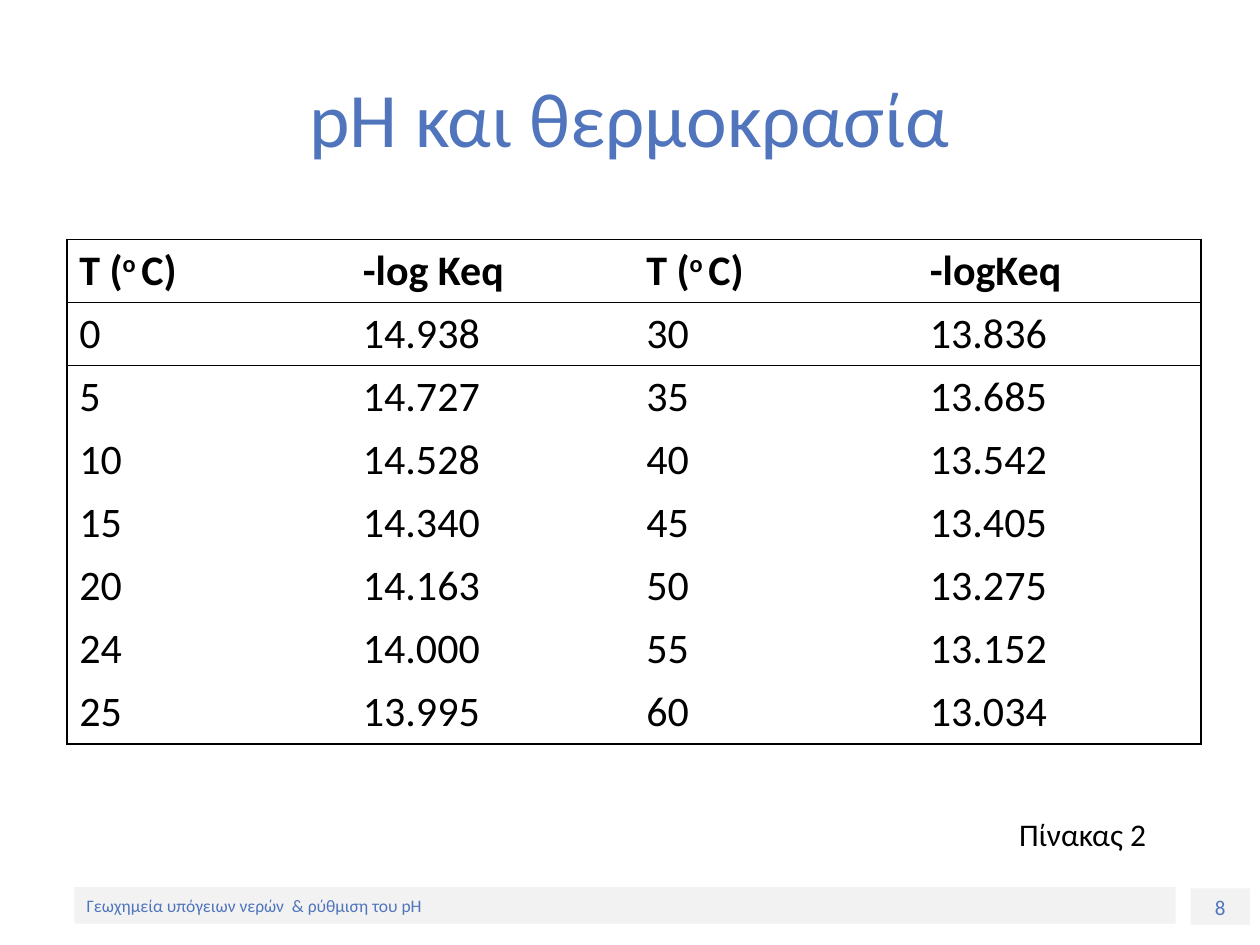
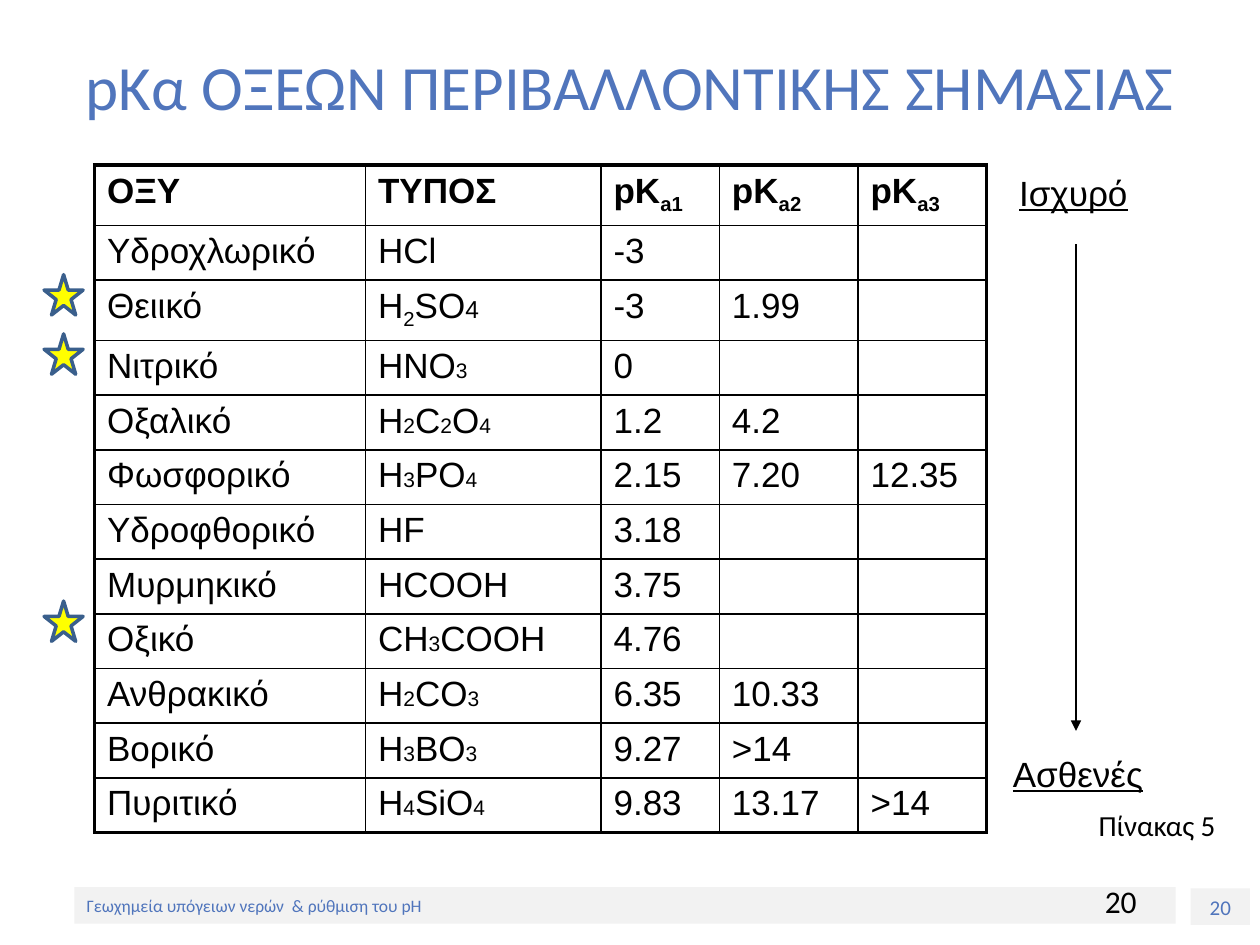
import itertools

import pptx
import pptx.dml.color
import pptx.enum.shapes
import pptx.enum.text
import pptx.oxml
import pptx.oxml.ns
import pptx.util

Inches = pptx.util.Inches
Pt = pptx.util.Pt
SHAPE = pptx.enum.shapes.MSO_SHAPE
ANCHOR = pptx.enum.text.MSO_ANCHOR
ALIGN = pptx.enum.text.PP_ALIGN

BLUE, BLACK, WHITE = "5075BC", "000000", "FFFFFF"
BAND, STAR_FILL, STAR_LINE = "F2F2F2", "FFFF00", "3A5F8C"

FOOTER = "Γεωχημεία υπόγειων νερών  & ρύθμιση του pH"
FOOTER_BOX = (0.59, 7.04, 8.74, 0.29)
NUMBER_BOX = (9.45, 7.05, 0.47, 0.29)

FOOTER_TEXT = {"name": "Calibri", "size": 10, "color": BLUE}
NUMBER_TEXT = {"name": "Calibri", "size": 12, "color": BLUE}
TITLE_TEXT = {"name": "Calibri", "color": BLUE}
BODY_TEXT = {"name": "Calibri", "size": 18, "color": BLACK}
WATER_TEXT = {"name": "Calibri", "size": 24, "color": BLACK}
ACID_TEXT = {"name": "Arial", "size": 20, "color": BLACK}
STRENGTH_TEXT = {**ACID_TEXT, "underline": True}

SUBSCRIPT = {"baseline": -25}
SUPERSCRIPT = {"baseline": 30}

TEMPERATURE = [("T (", {}), ("o ", SUPERSCRIPT), ("C)", {})]
WATER_ROWS = [
    (TEMPERATURE, "-log Keq", TEMPERATURE, "-logKeq"),
    ("0", "14.938", "30", "13.836"),
    ("5", "14.727", "35", "13.685"),
    ("10", "14.528", "40", "13.542"),
    ("15", "14.340", "45", "13.405"),
    ("20", "14.163", "50", "13.275"),
    ("24", "14.000", "55", "13.152"),
    ("25", "13.995", "60", "13.034"),
]
WATER_COLUMNS = [2.25] * 4
RULED_ROWS = 2


def formula(symbols):
    return [("".join(part), {"size": 12} if digits else {})
            for digits, part in itertools.groupby(symbols, str.isdigit)]


def constant(index):
    return [("pK", {}), (f"a{index}", SUBSCRIPT)]


SULFURIC = [("H", {}), ("2", SUBSCRIPT), ("SO", {}), ("4", {"size": 14})]
ACID_ROWS = [
    ("ΟΞΥ", "ΤΥΠΟΣ", constant(1), constant(2), constant(3)),
    ("Υδροχλωρικό", "HCl", "-3", "", ""),
    ("Θειικό", SULFURIC, "-3", "1.99", ""),
    ("Νιτρικό", formula("HNO3"), "0", "", ""),
    ("Οξαλικό", formula("H2C2O4"), "1.2", "4.2", ""),
    ("Φωσφορικό", formula("H3PO4"), "2.15", "7.20", "12.35"),
    ("Υδροφθορικό", "HF", "3.18", "", ""),
    ("Μυρμηκικό", "HCOOH", "3.75", "", ""),
    ("Οξικό", formula("CH3COOH"), "4.76", "", ""),
    ("Ανθρακικό", formula("H2CO3"), "6.35", "10.33", ""),
    ("Βορικό", formula("H3BO3"), "9.27", ">14", ""),
    ("Πυριτικό", formula("H4SiO4"), "9.83", "13.17", ">14"),
]
ACID_COLUMNS = [2.15, 1.87, 0.94, 1.1, 1.02]
STRENGTHS = [("Ισχυρό", 7.99, 1.31), ("Ασθενές", 7.94, 5.92)]
STAR_TOPS = [2.18, 2.65, 4.77]


def rgb(value):
    return pptx.dml.color.RGBColor.from_string(value)


def inches(box):
    return [Inches(length) for length in box]


def write(paragraph, content, style):
    runs = [(content, {})] if isinstance(content, str) else content
    for text, change in runs:
        if not text:
            continue
        run = paragraph.add_run()
        run.text = text
        for key, value in {**style, **change}.items():
            if key == "color":
                run.font.color.rgb = rgb(value)
            elif key == "baseline":
                run._r.get_or_add_rPr().set("baseline", str(value * 1000))
            else:
                setattr(run.font, key, Pt(value) if key == "size" else value)


def add_text(slide, box, text, style, fill=None, anchor=ANCHOR.MIDDLE, align=ALIGN.LEFT):
    if fill:
        holder = add_shape(slide, SHAPE.RECTANGLE, box, fill)
    else:
        holder = slide.shapes.add_textbox(*inches(box))
    frame = holder.text_frame
    for key, value in {"word_wrap": True, "vertical_anchor": anchor}.items():
        setattr(frame, key, value)
    frame.paragraphs[0].alignment = align
    write(frame.paragraphs[0], text, style)


def add_shape(slide, kind, box, fill, line=None):
    shape = slide.shapes.add_shape(kind, *inches(box))
    shape.shadow.inherit = False
    shape.fill.solid()
    shape.fill.fore_color.rgb = rgb(fill)
    if line:
        shape.line.color.rgb = rgb(line)
        shape.line.width = Pt(2)
    else:
        shape.line.fill.background()
    return shape


def set_borders(cell, widths):
    cell.fill.background()
    properties = cell._tc.get_or_add_tcPr()
    for position, (side, width) in enumerate(zip("LRTB", widths)):
        paint = f'<a:solidFill><a:srgbClr val="{BLACK}"/></a:solidFill>' if width else "<a:noFill/>"
        properties.insert(position, pptx.oxml.parse_xml(
            f'<a:ln{side} {pptx.oxml.ns.nsdecls("a")} w="{Pt(width)}">{paint}</a:ln{side}>'))


def add_grid(slide, left, top, columns, row_height, rows, style, borders):
    box = (left, top, sum(columns), row_height * len(rows))
    grid = slide.shapes.add_table(len(rows), len(columns), *inches(box)).table
    grid.first_row = grid.horz_banding = False
    for column, width in zip(grid.columns, columns):
        column.width = Inches(width)
    for r, row in enumerate(rows):
        grid.rows[r].height = Inches(row_height)
        for c, content in enumerate(row):
            cell = grid.cell(r, c)
            set_borders(cell, borders(r, c))
            write(cell.text_frame.paragraphs[0], content, {**style, "bold": r == 0})


def water_borders(r, c):
    last_row, last_column = len(WATER_ROWS) - 1, len(WATER_COLUMNS) - 1
    return (c == 0, c == last_column, r <= RULED_ROWS, r < RULED_ROWS or r == last_row)


def acid_borders(r, c):
    last_row, last_column = len(ACID_ROWS) - 1, len(ACID_COLUMNS) - 1
    edges = (c == 0, c == last_column, r == 0, r == last_row)
    return [2.25 if edge else 1 for edge in edges]


def add_slide(deck, number, title, title_top, title_size):
    slide = deck.slides.add_slide(deck.slide_layouts[6])
    add_text(slide, NUMBER_BOX, number, NUMBER_TEXT, BAND, ANCHOR.TOP, ALIGN.CENTER)
    add_text(slide, FOOTER_BOX, FOOTER, FOOTER_TEXT, BAND)
    add_text(slide, (0.5, title_top, 9, 1.25), title,
             {**TITLE_TEXT, "size": title_size}, align=ALIGN.CENTER)
    return slide


def add_arrow(slide, x, top, bottom):
    arrow = slide.shapes.add_connector(
        pptx.enum.shapes.MSO_CONNECTOR.STRAIGHT, *inches((x, top, x, bottom)))
    arrow.line.color.rgb = rgb(BLACK)
    arrow.line.width = Pt(0.75)
    namespace = pptx.oxml.ns.nsdecls("a")
    arrow.line._get_or_add_ln().append(
        pptx.oxml.parse_xml(f'<a:tailEnd {namespace} type="triangle"/>'))
    arrow._element.spPr.append(pptx.oxml.parse_xml(f"<a:effectLst {namespace}/>"))


def build_water(deck):
    slide = add_slide(deck, "8", "pH και θερμοκρασία", 0.3, 44)
    add_text(slide, (7.99, 6.38, 1.57, 0.47), "Πίνακας 2", BODY_TEXT, WHITE)
    add_grid(slide, 0.53, 1.9, WATER_COLUMNS, 0.5, WATER_ROWS, WATER_TEXT, water_borders)


def build_acids(deck):
    slide = add_slide(deck, "20", "pKα ΟΞΕΩΝ ΠΕΡΙΒΑΛΛΟΝΤΙΚΗΣ ΣΗΜΑΣΙΑΣ", 0.05, 36)
    add_text(slide, (8.67, 6.95, 0.83, 0.4), "20", BODY_TEXT, anchor=ANCHOR.TOP)
    add_grid(slide, 0.75, 1.31, ACID_COLUMNS, 0.41, ACID_ROWS, ACID_TEXT, acid_borders)
    for strength, left, top in STRENGTHS:
        add_text(slide, (left, top, 1.65, 0.43), strength, STRENGTH_TEXT, anchor=ANCHOR.TOP)
    add_arrow(slide, 8.54, 1.94, 5.8)
    for top in STAR_TOPS:
        add_shape(slide, SHAPE.STAR_5_POINT, (0.35, top, 0.31, 0.32), STAR_FILL, STAR_LINE)
    add_text(slide, (8.62, 6.36, 1.18, 0.38), "Πίνακας 5", {**BODY_TEXT, "size": 16.6}, WHITE)


def main():
    deck = pptx.Presentation()
    deck.slide_width, deck.slide_height = Inches(10), Inches(7.5)
    build_water(deck)
    build_acids(deck)
    deck.save("out.pptx")


if __name__ == "__main__":
    main()
